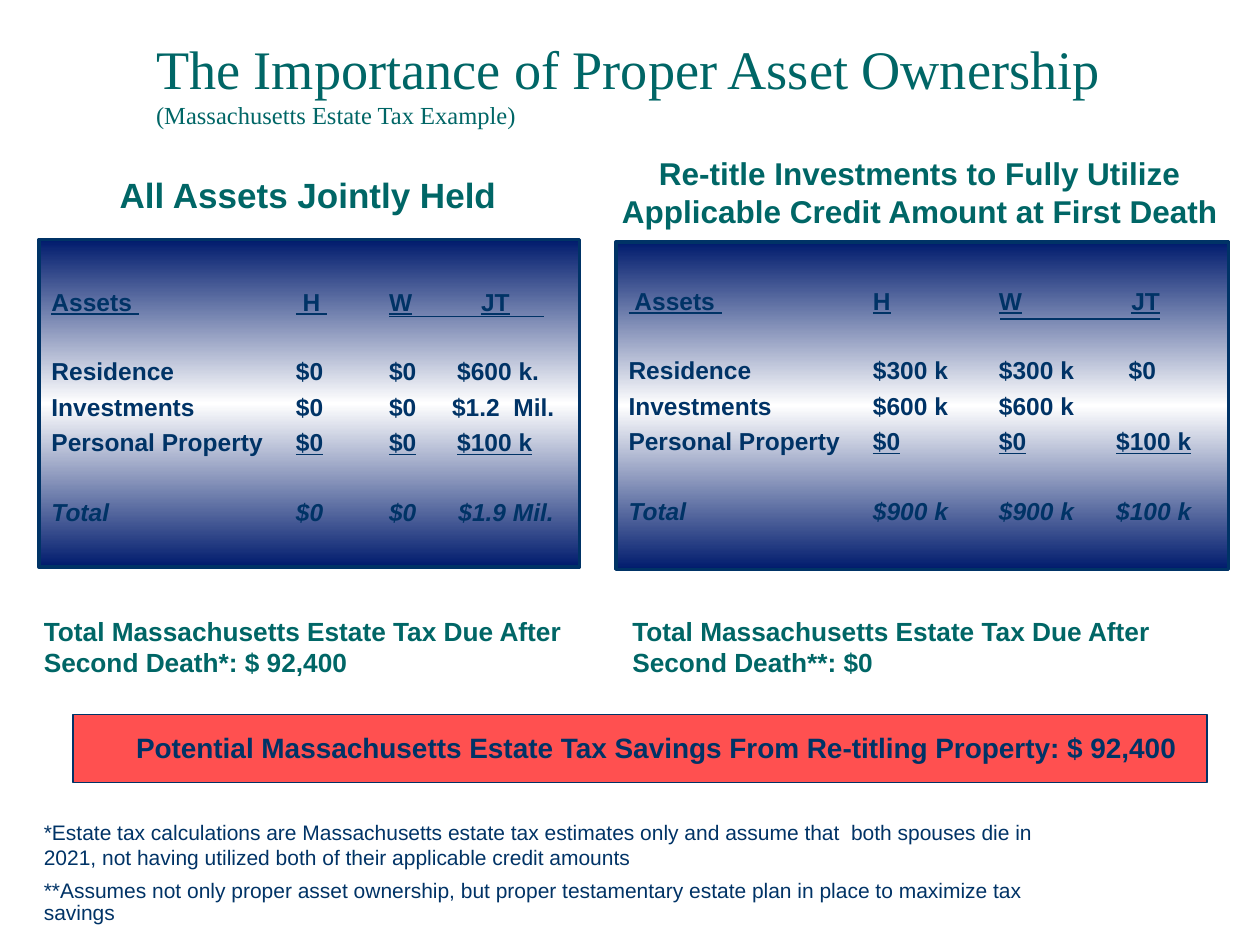
from copy import deepcopy
from pptx import Presentation
from pptx.dml.color import RGBColor as RGB
from pptx.enum.shapes import MSO_CONNECTOR as LINK, MSO_SHAPE as SHAPE
from pptx.enum.text import MSO_ANCHOR as ANCHOR, PP_ALIGN as ALIGN
from pptx.oxml.ns import qn
from pptx.util import Inches, Pt

TEAL, NAVY, DEEP, RED = "006666", "003366", "001B6D", "FF5050"
hue = RGB.from_string

deck = Presentation()
deck.slide_width, deck.slide_height = Inches(10), Inches(7.5)
slide = deck.slides.add_slide(deck.slide_layouts[6])
shapes = slide.shapes
# The grid has 100 columns and 100 rows
COL, ROW = deck.slide_width // 100, deck.slide_height // 100


def grid(x, y, *size):
    """Turn columns and rows into slide lengths."""
    return [int(n * unit) for n, unit in zip((x, y) + size, (COL, ROW) * 2)]


def write(par, text, **form):
    """Add a run in bold navy Arial, changed by the format values given."""
    run = par.add_run()
    run.text = text
    look = {"name": "Arial", "size": 14, "bold": True, "color": NAVY} | form
    run.font.color.rgb = hue(look.pop("color"))
    run.font.size = Pt(look.pop("size"))
    for key, value in look.items():
        setattr(run.font, key, value)


# Title
box = shapes.add_textbox(*grid(11.4, -6.9, 85.2, 21.3))
box.text_frame.word_wrap = True
box.text_frame.vertical_anchor = ANCHOR.BOTTOM
par = box.text_frame.paragraphs[0]
serif = {"name": "Times New Roman", "bold": False, "color": TEAL}
write(par, "The Importance of Proper Asset Ownership", size=31, **serif)
par.add_line_break()
write(par, "(Massachusetts Estate Tax Example)", **serif)

# Savings banner
bar = shapes.add_shape(SHAPE.RECTANGLE, *grid(5.8, 75.6, 90, 7.2))
bar.shadow.inherit = False
bar.fill.solid()
bar.fill.fore_color.rgb = hue(RED)
bar.line.color.rgb = hue(NAVY)
bar.line.width = Pt(1)
bar.text_frame.margin_left = 5 * COL
par = bar.text_frame.paragraphs[0]
par.alignment = ALIGN.LEFT
par.line_spacing = 0.95
write(par, "Potential Massachusetts Estate Tax Savings From "
      "Re-titling Property: $ 92,400", size=16)

# Asset panels: place, top inset, stop of W, span of the rule under W to JT,
# then the rows, each ending with the stop of its JT cell
panels = [
    ((3.1, 25.35, 42.9, 34.65), 0.1, 26.8, (30.9, 43.2), [
        (("Assets ", " H ", "W", "JT"), 34.1),
        (("Residence", "$0", "$0", "$600 k."), 32.2),
        (("Investments", "$0", "$0", "$1.2  Mil."), 31.8),
        (("Personal Property", "$0", "$0", "$100 k"), 32.2),
        (("Total", "$0", "$0", "$1.9 Mil."), 32.3)]),
    ((48.9, 25.6, 48.6, 34.65), 0.05, 29.4, (79.4, 92.1), [
        ((" Assets ", "H", "W", "JT"), 39.9),
        (("Residence", "$300 k", "$300 k", "$0"), 39.7),
        (("Investments", "$600 k", "$600 k"), 38.7),
        (("Personal Property", "$0", "$0", "$100 k"), 38.7),
        (("Total", "$900 k", "$900 k", "$100 k"), 38.7)]),
]
for place, inset, mid, (start, stop), rows in panels:
    panel = shapes.add_shape(SHAPE.RECTANGLE, *grid(*place))
    panel.shadow.inherit = False
    panel.line.color.rgb = hue(NAVY)
    panel.line.width = Pt(2)
    fill = panel.fill
    fill.gradient()
    fill.gradient_angle = 270
    for shade, end, tint in zip(fill.gradient_stops, (0, 0.5), (DEEP, "FFFFFF")):
        shade.position = end
        shade.color.rgb = hue(tint)
    stops = panel._element.spPr.find(qn("a:gradFill")).find(qn("a:gsLst"))
    last = deepcopy(stops[0])
    last.set("pos", "100000")
    stops.append(last)

    frame = panel.text_frame
    frame.margin_top = Inches(inset)
    for at, (cells, edge) in enumerate(rows):
        par = frame.add_paragraph() if at else frame.paragraphs[0]
        tabs = par._p.get_or_add_pPr().makeelement(qn("a:tabLst"), {})
        par._p.pPr.append(tabs)
        for tab in (19.4, mid, edge):
            mark = tabs.makeelement(
                qn("a:tab"), {"pos": str(int(tab * COL)), "algn": "l"})
            tabs.append(mark)
        par.alignment = ALIGN.LEFT
        # Head and total stand one row apart from the rest
        par.space_before = Pt((0, 23, 3.5, 3.5, 23)[at])
        for spot, cell in enumerate(cells):
            if spot:
                write(par, "\t")
            under = at == 0 or (at == 3 and spot > 0)
            write(par, cell, underline=under, italic=at == 4)

    level = place[1] + 8.15
    rule = shapes.add_connector(
        LINK.STRAIGHT, *grid(start, level), *grid(stop, level))
    rule.line.color.rgb = hue(NAVY)
    rule.line.width = Pt(1)
    props = rule._element.spPr
    props.append(props.makeelement(qn("a:effectLst"), {}))

# Headings, results and footnotes
head = {"color": TEAL}
note = {"size": 12, "bold": False}
texts = [
    ((8.5, 17.75, 31.9, 5.75), ALIGN.CENTER, False, head | {"size": 20},
     ["All Assets Jointly Held"]),
    ((48.3, 15.6, 49.4, 9.35), ALIGN.CENTER, False, head | {"size": 18},
     ["Re-title Investments to Fully Utilize",
      "Applicable Credit Amount at First Death"]),
    ((2.5, 64.4, 45, 8), ALIGN.LEFT, True, head | {"size": 15},
     ["Total Massachusetts Estate Tax Due After Second Death*: $ 92,400"]),
    ((49.2, 64.4, 47.5, 8), ALIGN.LEFT, True, head | {"size": 15},
     ["Total Massachusetts Estate Tax Due After Second Death**: $0"]),
    ((2.5, 85.9, 81, 12.8), ALIGN.LEFT, True, note,
     ["*Estate tax calculations are Massachusetts estate tax estimates only and "
      "assume that  both spouses die in 2021, not having utilized both of their "
      "applicable credit amounts",
      "**Assumes not only proper asset ownership, but proper testamentary estate "
      "plan in place to maximize tax savings"]),
]
for place, align, wrap, form, lines in texts:
    frame = shapes.add_textbox(*grid(*place)).text_frame
    frame.word_wrap = wrap
    frame.vertical_anchor = ANCHOR.MIDDLE
    for at, line in enumerate(lines):
        par = frame.add_paragraph() if at else frame.paragraphs[0]
        par.alignment = align
        if at and form is note:
            par.space_before = Pt(6)
            par.line_spacing = 0.9
        write(par, line, **form)

deck.save("out.pptx")
